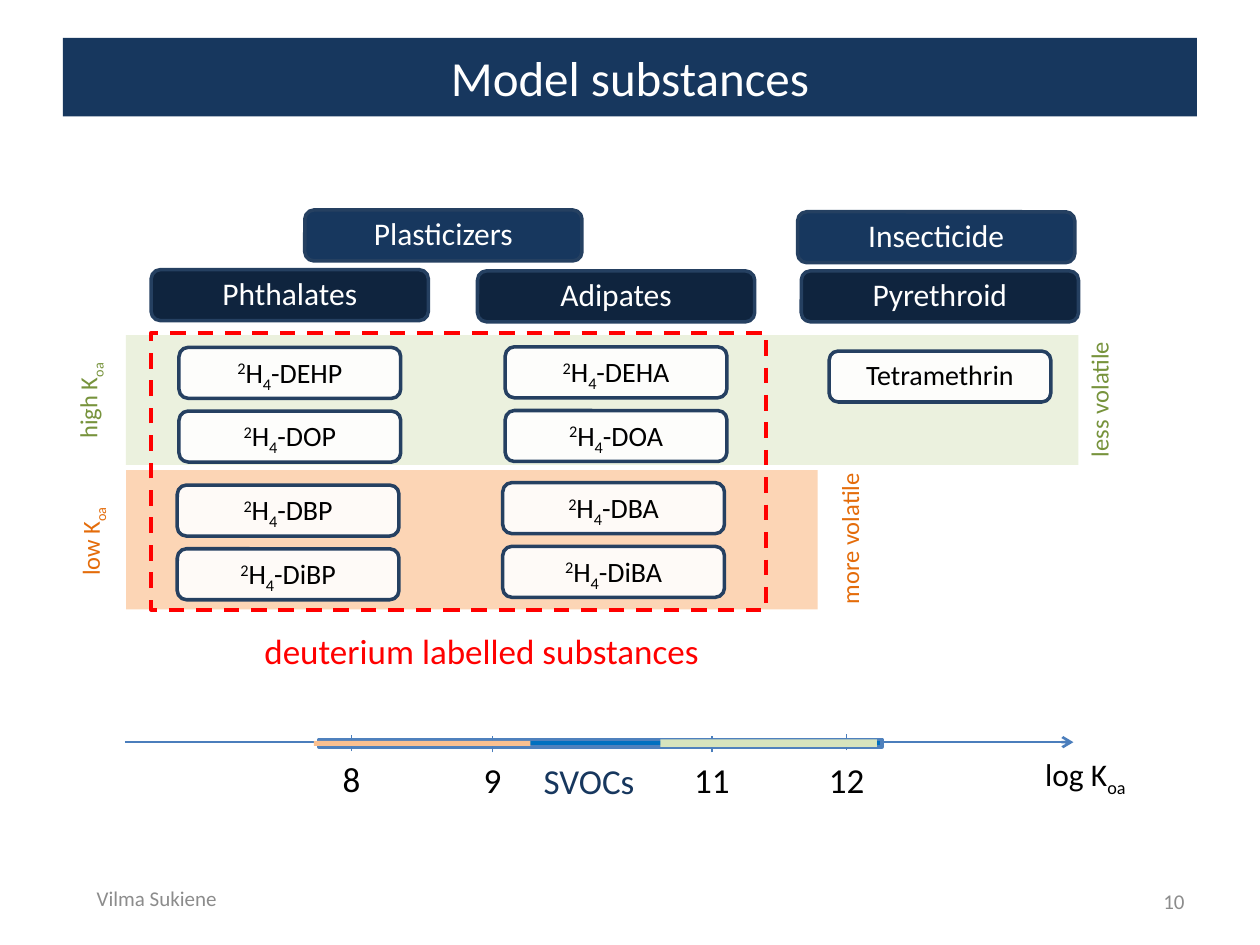
"""Build the model substances slide: substance groups above a log Koa axis."""
from dataclasses import dataclass
from typing import Any, Optional

from lxml.etree import SubElement
from pptx import Presentation
from pptx.dml.color import RGBColor
from pptx.enum.dml import MSO_LINE_DASH_STYLE as DASH
from pptx.enum.shapes import MSO_CONNECTOR as CONN, MSO_SHAPE as SHAPE
from pptx.enum.text import MSO_ANCHOR as ANCHOR, PP_ALIGN as ALIGN
from pptx.oxml.ns import qn
from pptx.util import Pt

C = {
    "navy": "17375E", "dark": "0F243E", "edge": "254061", "white": "FFFFFF",
    "black": "000000", "red": "FF0000", "grey": "8C8C8C", "axis": "4B7EBC",
    "svoc": "0070C0", "svoc_edge": "4F81BD", "low_bar": "FAC090",
    "high_bar": "D7E4BD", "low_band": "FCD5B5", "high_band": "EBF1DE",
    "low_text": "E46C0A", "high_text": "77933C",
}
SUPER, SUB = 30, -25
HEAD_W, CELL_W, CELL_H, CELL_STEP = 158.4, 126.7, 29.1, 36.4
AXIS_Y = 424.1
Runs = list[tuple[str, int]]


@dataclass
class Box:
    """A rectangle in points with its fill and outline."""
    x: float
    y: float
    w: float
    h: float
    fill: Optional[str] = None
    edge: Optional[str] = None
    edge_w: float = 2
    kind: SHAPE = SHAPE.RECTANGLE
    dash: Optional[DASH] = None


@dataclass
class Label:
    """A piece of text with its place and format in points."""
    runs: Runs
    x: float
    y: float
    w: float
    h: float
    size: float
    color: str
    align: ALIGN = ALIGN.LEFT
    anchor: ANCHOR = ANCHOR.TOP
    wrap: bool = False
    rotation: float = 0
    bottom: float = 3.6


@dataclass
class Stack:
    """A column of substance cells, from top to bottom."""
    x: float
    y: float
    names: list[str]
    labelled: bool = True


def rgb(name: str) -> RGBColor:
    """Return the named colour."""
    return RGBColor.from_string(C[name])


def set_all(obj: Any, values: dict[str, Any]) -> None:
    """Set each attribute in values on obj."""
    for name, value in values.items():
        setattr(obj, name, value)


def write(s: Any, runs: Runs, size: float, color: str, align: ALIGN, frame: dict[str, Any]) -> None:
    """Write one paragraph of runs into a shape."""
    tf = s.text_frame
    set_all(tf, frame)
    p = tf.paragraphs[0]
    p.alignment = align
    for text, baseline in runs:
        r = p.add_run()
        r.text = text
        set_all(r.font, {"name": "Calibri", "size": Pt(size)})
        r.font.color.rgb = rgb(color)
        if baseline:
            r._r.get_or_add_rPr().set("baseline", str(baseline * 1000))


def draw_box(sp: Any, b: Box) -> Any:
    """Draw a box and return its shape."""
    s = sp.add_shape(b.kind, Pt(b.x), Pt(b.y), Pt(b.w), Pt(b.h))
    s.shadow.inherit = False
    if b.kind == SHAPE.ROUNDED_RECTANGLE:
        s.adjustments[0] = 0.18
    if b.fill:
        s.fill.solid()
        s.fill.fore_color.rgb = rgb(b.fill)
    else:
        s.fill.background()
    if b.edge:
        s.line.color.rgb = rgb(b.edge)
        s.line.width = Pt(b.edge_w)
        if b.dash:
            s.line.dash_style = b.dash
    else:
        s.line.fill.background()
    return s


def draw_label(sp: Any, t: Label) -> None:
    """Draw a text box."""
    s = sp.add_textbox(Pt(t.x), Pt(t.y), Pt(t.w), Pt(t.h))
    s.rotation = t.rotation
    frame = {"word_wrap": t.wrap, "vertical_anchor": t.anchor, "margin_bottom": Pt(t.bottom)}
    write(s, t.runs, t.size, t.color, t.align, frame)


def draw_line(sp: Any, x1: float, y1: float, x2: float, y2: float, width: float, arrow: bool = False) -> None:
    """Draw an axis line, with an arrowhead at its end if asked."""
    s = sp.add_connector(CONN.STRAIGHT, Pt(x1), Pt(y1), Pt(x2), Pt(y2))
    s.line.color.rgb = rgb("axis")
    s.line.width = Pt(width)
    if arrow:
        SubElement(s.line._get_or_add_ln(), qn("a:tailEnd"), type="arrow")
    SubElement(s._element.spPr, qn("a:effectLst"))


def draw_card(sp: Any, runs: Runs, x: float, y: float, w: float, fill: str, size: float, color: str) -> Any:
    """Draw a rounded card with centred text."""
    s = draw_box(sp, Box(x, y, w, CELL_H, fill, "edge", kind=SHAPE.ROUNDED_RECTANGLE))
    frame = {"word_wrap": True, "vertical_anchor": ANCHOR.MIDDLE,
             "margin_top": Pt(3), "margin_bottom": Pt(3)}
    write(s, runs, size, color, ALIGN.CENTER, frame)
    s.text_frame.paragraphs[0].line_spacing = 0.9
    return s


def draw_stack(sp: Any, st: Stack) -> None:
    """Draw a column of slightly transparent substance cells."""
    for i, name in enumerate(st.names):
        runs = [("2", SUPER), ("H", 0), ("4", SUB), (f"-{name}", 0)] if st.labelled else [(name, 0)]
        s = draw_card(sp, runs, st.x, st.y + i * CELL_STEP, CELL_W, "white", 16, "black")
        clr = s._element.spPr.find(qn("a:solidFill")).find(qn("a:srgbClr"))
        SubElement(clr, qn("a:alpha"), val="90000")


def draw_axis(sp: Any) -> None:
    """Draw the log Koa axis with its ranges, ticks and labels."""
    draw_line(sp, 71.3, AXIS_Y, 613.4, AXIS_Y, 1.5, arrow=True)
    draw_box(sp, Box(182.2, 422.6, 321.8, 4.3, "svoc", "svoc_edge"))
    ticks = [("8", 200.9, 419.8, 429.1), ("9", 281.5, 420.5, 429.8),
             ("11", 406.8, 420.5, 429.8), ("12", 483.8, 419.4, 429.8)]
    for text, x, top, label_y in ticks:
        draw_line(sp, x, top + 9.4, x, top, 0.75)
        w = 14.4 + 10.2 * len(text)
        draw_label(sp, Label([(text, 0)], x - w / 2, label_y, w, 28.1, 20, "black", ALIGN.CENTER, bottom=0))
    draw_label(sp, Label([("log K", 0), ("oa", SUB)], 589, 427.7, 62.6, 25.2, 18, "black", ALIGN.CENTER, bottom=0))
    draw_label(sp, Label([("SVOCs", 0)], 303.1, 430.6, 67, 31.7, 20, "navy", ALIGN.CENTER))
    draw_box(sp, Box(377.3, 422.6, 123.8, 4.3, "high_bar"))
    draw_box(sp, Box(179.3, 423.4, 123.8, 2.9, "low_bar"))


def draw_bands(sp: Any) -> None:
    """Draw the volatility bands with their upright labels."""
    draw_box(sp, Box(72, 268.6, 395.3, 79.6, "low_band"))
    draw_box(sp, Box(72, 191.5, 544.3, 74.2, "high_band"))
    sides = [([("low K", 0), ("oa", SUB)], 24.5, 296.6, 54.7, "low_text"),
             ([("high K", 0), ("oa", SUB)], 20.9, 216, 59, "high_text"),
             ([("more volatile", 0)], 440.6, 295.2, 90, "low_text"),
             ([("less volatile", 0)], 587.5, 215.3, 81.4, "high_text")]
    for runs, x, y, w, color in sides:
        draw_label(sp, Label(runs, x, y, w, 24.5, 14, color, rotation=270))


def main() -> None:
    """Build and save the slide."""
    prs = Presentation()
    set_all(prs, {"slide_width": Pt(720), "slide_height": Pt(540)})
    sp = prs.slides.add_slide(prs.slide_layouts[6]).shapes
    draw_axis(sp)
    draw_bands(sp)
    title = draw_box(sp, Box(36, 21.6, 648, 44.9, "navy"))
    write(title, [("Model substances", 0)], 28, "white", ALIGN.CENTER, {"vertical_anchor": ANCHOR.MIDDLE})
    draw_box(sp, Box(86.4, 190.1, 351.4, 158.4, edge="red", edge_w=2.25, dash=DASH.DASH))
    draw_label(sp, Label([("deuterium labelled substances", 0)], 144, 356.4, 265.7, 31.7, 20, "red"))
    draw_label(sp, Label([("10", 0)], 516.2, 500.4, 167.8, 28.8, 12, "grey", ALIGN.RIGHT, ANCHOR.MIDDLE, True))
    draw_label(sp, Label([("Vilma Sukiene", 0)], 48.2, 499, 228.2, 28.8, 12, "grey", anchor=ANCHOR.MIDDLE, wrap=True))
    for text, x, y, fill in [("Adipates", 272.9, 154.8, "dark"), ("Pyrethroid", 457.9, 154.8, "dark"),
                             ("Phthalates", 86.4, 154.1, "dark"), ("Plasticizers", 174.2, 120, "navy"),
                             ("Insecticide", 455.8, 121, "navy")]:
        draw_card(sp, [(text, 0)], x, y, HEAD_W, fill, 18, "white")
    for st in [Stack(287.3, 275.8, ["DBA", "DiBA"]), Stack(288.7, 198.2, ["DEHA", "DOA"]),
               Stack(473.8, 200.6, ["Tetramethrin"], labelled=False),
               Stack(101.3, 277.2, ["DBP", "DiBP"]), Stack(102.3, 198.5, ["DEHP", "DOP"])]:
        draw_stack(sp, st)
    prs.save("out.pptx")


if __name__ == "__main__":
    main()
